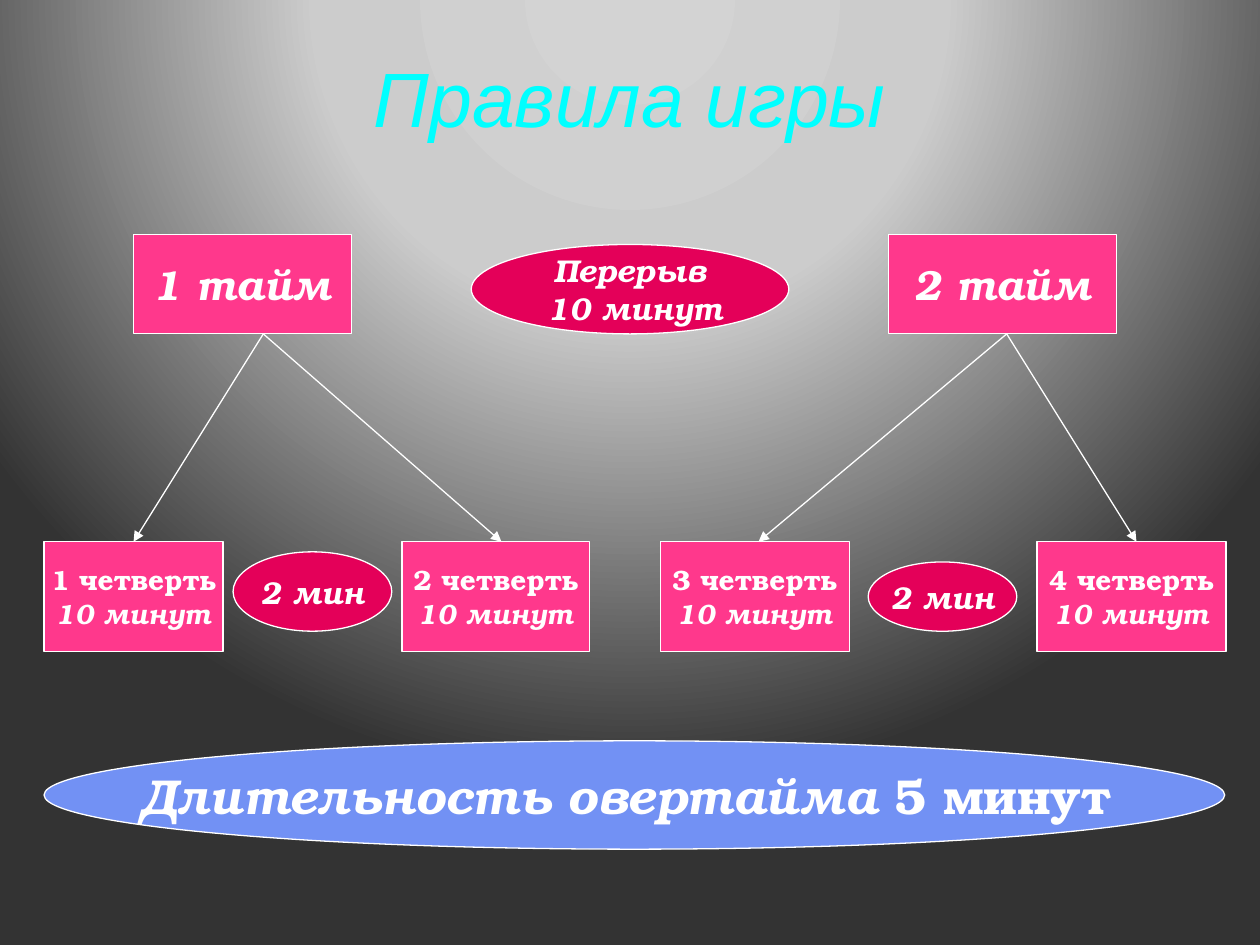
import pptx
import pptx.dml.color
import pptx.enum.shapes
import pptx.enum.text
import pptx.oxml
import pptx.oxml.ns
import pptx.util
from pptx.util import Inches

COLORS = {
    "title": "00FFFF",
    "period": "FF388C",
    "pause": "E40059",
    "overtime": "7291F4",
    "white": "FFFFFF",
}
BACKDROP = [(0, "D3D3D3"), (40, "CCCCCC"), (100, "333333")]
RECT = pptx.enum.shapes.MSO_SHAPE.RECTANGLE
OVAL = pptx.enum.shapes.MSO_SHAPE.OVAL


class GameRules:
    title_font = "Arial"
    body_font = "TeX Gyre Bonum"
    outline = pptx.util.Pt(0.75)

    def __init__(self, slide):
        self.slide = slide

    def color(self, name):
        return pptx.dml.color.RGBColor.from_string(COLORS[name])

    def background(self, stops):
        stop_xml = "".join(
            f'<a:gs pos="{pos * 1000}"><a:srgbClr val="{value}"/></a:gs>' for pos, value in stops
        )
        backdrop = pptx.oxml.parse_xml(
            f'<p:bg {pptx.oxml.ns.nsdecls("p", "a")}><p:bgPr>'
            f'<a:gradFill rotWithShape="1"><a:gsLst>{stop_xml}</a:gsLst>'
            '<a:path path="circle">'
            '<a:fillToRect l="50000" t="-80000" r="50000" b="180000"/>'
            "</a:path></a:gradFill><a:effectLst/></p:bgPr></p:bg>"
        )
        self.slide.element.cSld.insert(0, backdrop)

    def style_font(self, font, name, size, color, bold, italic):
        font.name = name
        font.size = pptx.util.Pt(size)
        font.color.rgb = self.color(color)
        font.bold = bold
        font.italic = italic

    def title(self, text, at):
        heading = self.slide.shapes.title
        heading.left, heading.top, heading.width, heading.height = map(Inches, at)
        frame = heading.text_frame
        frame.text = text
        frame.vertical_anchor = pptx.enum.text.MSO_ANCHOR.MIDDLE
        line = frame.paragraphs[0]
        line.alignment = pptx.enum.text.PP_ALIGN.CENTER
        self.style_font(line.font, self.title_font, 44, "title", False, True)

    def block(self, outline, at, fill, size, lines):
        block = self.slide.shapes.add_shape(outline, *map(Inches, at))
        block.shadow.inherit = False
        block.fill.solid()
        block.fill.fore_color.rgb = self.color(fill)
        block.line.color.rgb = self.color("white")
        block.line.width = self.outline
        frame = block.text_frame
        frame.word_wrap = False
        frame.vertical_anchor = pptx.enum.text.MSO_ANCHOR.MIDDLE
        frame.text = "\n".join(text for text, italic in lines)
        for paragraph, (text, italic) in zip(frame.paragraphs, lines):
            paragraph.alignment = pptx.enum.text.PP_ALIGN.CENTER
            self.style_font(paragraph.font, self.body_font, size, "white", True, italic)
        return frame

    def arrow(self, start, end):
        arrow = self.slide.shapes.add_connector(
            pptx.enum.shapes.MSO_CONNECTOR.STRAIGHT, *map(Inches, start + end)
        )
        arrow.line.color.rgb = self.color("white")
        arrow.line.width = self.outline
        line_xml = arrow.line._get_or_add_ln()
        line_xml.append(
            pptx.oxml.parse_xml(f'<a:tailEnd {pptx.oxml.ns.nsdecls("a")} type="triangle"/>')
        )
        arrow.element.spPr.append(
            pptx.oxml.parse_xml(f'<a:effectLst {pptx.oxml.ns.nsdecls("a")}/>')
        )


def main():
    deck = pptx.Presentation()
    deck.slide_width, deck.slide_height = Inches(10), Inches(7.5)
    rules = GameRules(deck.slides.add_slide(deck.slide_layouts[5]))
    rules.background(BACKDROP)
    rules.title("Правила игры", (0.5, 0.3, 9, 0.93))

    half_top, half_height, quarter_top = 1.86, 0.79, 4.3
    for number, (left, width) in enumerate([(1.06, 1.73), (7.05, 1.81)], 1):
        at = (left, half_top, width, half_height)
        rules.block(RECT, at, "period", 24, [(f"{number} тайм", True)])

    quarters = [(0.35, 1.42), (3.19, 1.49), (5.24, 1.5), (8.23, 1.5)]
    for number, (left, width) in enumerate(quarters, 1):
        lines = [(f"{number} четверть", False), ("10 минут", True)]
        rules.block(RECT, (left, quarter_top, width, 0.87), "period", 16, lines)

    for at in [(1.85, 4.38, 1.26, 0.63), (6.89, 4.46, 1.18, 0.55)]:
        rules.block(OVAL, at, "pause", 18, [("2 мин", True)])
    halftime = [("Перерыв", True), (" 10 минут", True)]
    rules.block(OVAL, (3.74, 1.94, 2.52, 0.71), "pause", 18, halftime)

    overtime = rules.block(
        OVAL, (0.35, 5.88, 9.37, 0.86), "overtime", 28, [("Длительность овертайма ", True)]
    )
    duration = overtime.paragraphs[0].add_run()
    duration.text = "5 минут "
    duration.font.italic = False

    for half_x, quarter_xs in [(2.09, (1.06, 3.98)), (7.99, (6.02, 9.02))]:
        for quarter_x in quarter_xs:
            rules.arrow((half_x, half_top + half_height), (quarter_x, quarter_top))

    deck.save("out.pptx")


if __name__ == "__main__":
    main()
